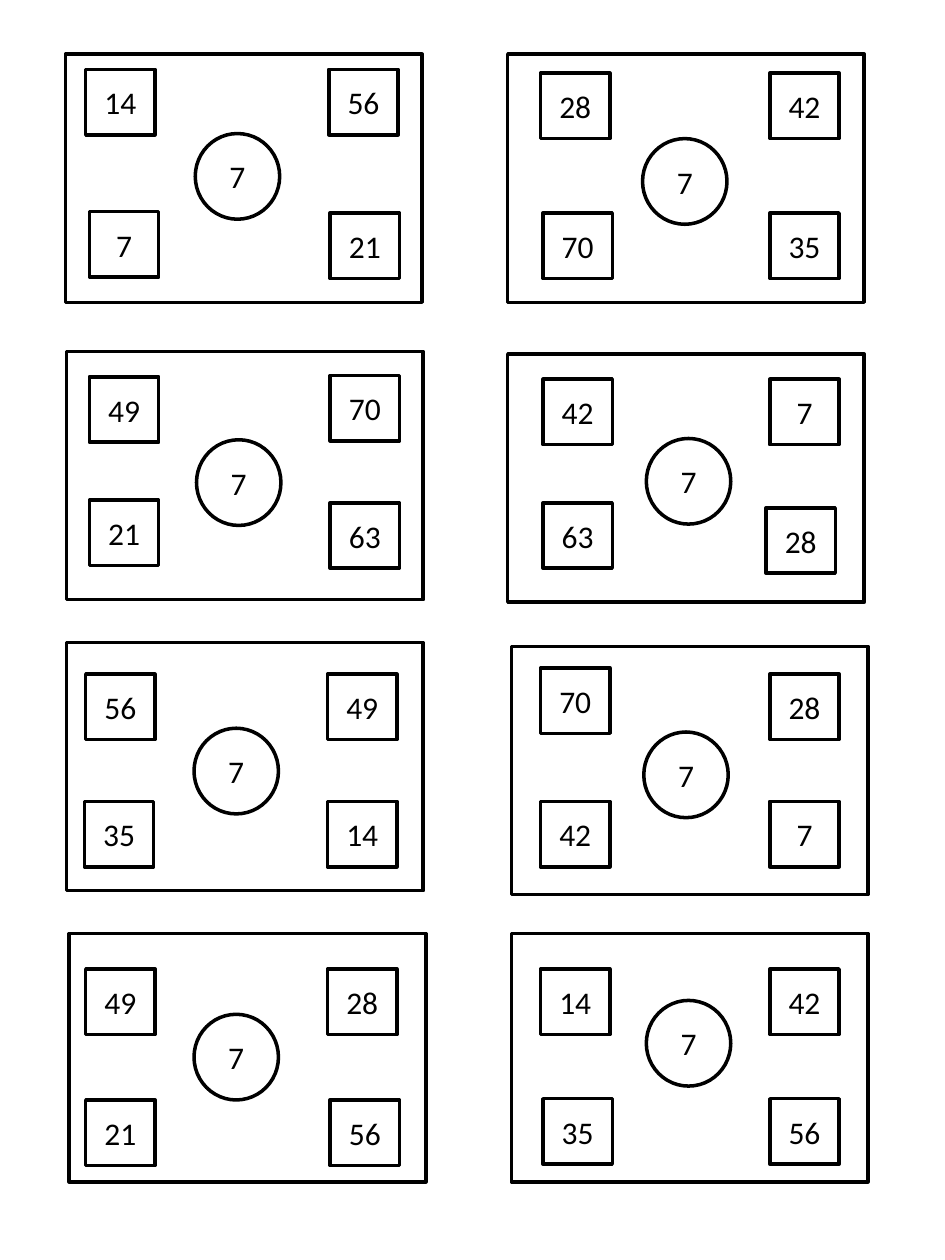
"""Build a page of eight practice cards for the multiples of seven."""
import pptx
import pptx.dml.color
import pptx.enum.shapes
import pptx.enum.text
import pptx.util

Inches = pptx.util.Inches
SHAPES = pptx.enum.shapes.MSO_SHAPE
CARD_SIZE = (2.83, 1.97)
SQUARE_SIZE = (0.55, 0.52)
CIRCLE_SIZE = (0.67, 0.68)
FACTOR = 7

CARDS = [
    ((0.52, 0.43), (1.55, 1.06),
     [(14, 0.68, 0.55), (56, 2.61, 0.55), (7, 0.71, 1.68), (21, 2.62, 1.69)]),
    ((4.03, 0.43), (5.1, 1.1),
     [(28, 4.29, 0.58), (42, 6.11, 0.58), (70, 4.31, 1.69), (35, 6.11, 1.69)]),
    ((0.53, 2.79), (1.56, 3.49),
     [(49, 0.71, 2.99), (70, 2.62, 2.98), (21, 0.71, 3.97), (63, 2.62, 3.99)]),
    ((4.03, 2.81), (5.13, 3.48),
     [(42, 4.31, 3.01), (7, 6.11, 3.01), (63, 4.31, 3.99), (28, 6.08, 4.03)]),
    ((0.53, 5.1), (1.54, 5.78),
     [(56, 0.68, 5.35), (49, 2.6, 5.35), (35, 0.67, 6.36), (14, 2.6, 6.36)]),
    ((4.06, 5.13), (5.11, 5.81),
     [(70, 4.29, 5.3), (28, 6.11, 5.35), (42, 4.29, 6.36), (7, 6.11, 6.36)]),
    ((0.55, 7.41), (1.54, 8.05),
     [(49, 0.68, 7.69), (28, 2.6, 7.69), (21, 0.68, 8.73), (56, 2.62, 8.73)]),
    ((4.06, 7.41), (5.13, 7.94),
     [(14, 4.29, 7.69), (42, 6.11, 7.69), (35, 4.31, 8.72), (56, 6.11, 8.72)]),
]


def color(value):
    return pptx.dml.color.RGBColor.from_string(value)


def add_outlined(page, kind, position, size, number=None):
    shape = page.shapes.add_shape(kind, *map(Inches, position + size))
    shape.shadow.inherit = False
    shape.fill.solid()
    shape.fill.fore_color.rgb = color("FFFFFF")
    shape.line.color.rgb = color("000000")
    shape.line.width = pptx.util.Pt(2)
    if number is not None:
        frame = shape.text_frame
        frame.text = str(number)
        frame.vertical_anchor = pptx.enum.text.MSO_ANCHOR.MIDDLE
        para = frame.paragraphs[0]
        para.alignment = pptx.enum.text.PP_ALIGN.CENTER
        font = para.runs[0].font
        font.name = "Calibri"
        font.size = pptx.util.Pt(18)
        font.color.rgb = color("000000")


deck = pptx.Presentation()
deck.slide_width = Inches(7.5)
deck.slide_height = Inches(10)
page = deck.slides.add_slide(deck.slide_layouts[6])

for card, circle, squares in CARDS:
    add_outlined(page, SHAPES.RECTANGLE, card, CARD_SIZE)
    for number, left, top in squares:
        add_outlined(page, SHAPES.RECTANGLE, (left, top), SQUARE_SIZE, number)
    add_outlined(page, SHAPES.OVAL, circle, CIRCLE_SIZE, FACTOR)

deck.save("out.pptx")
